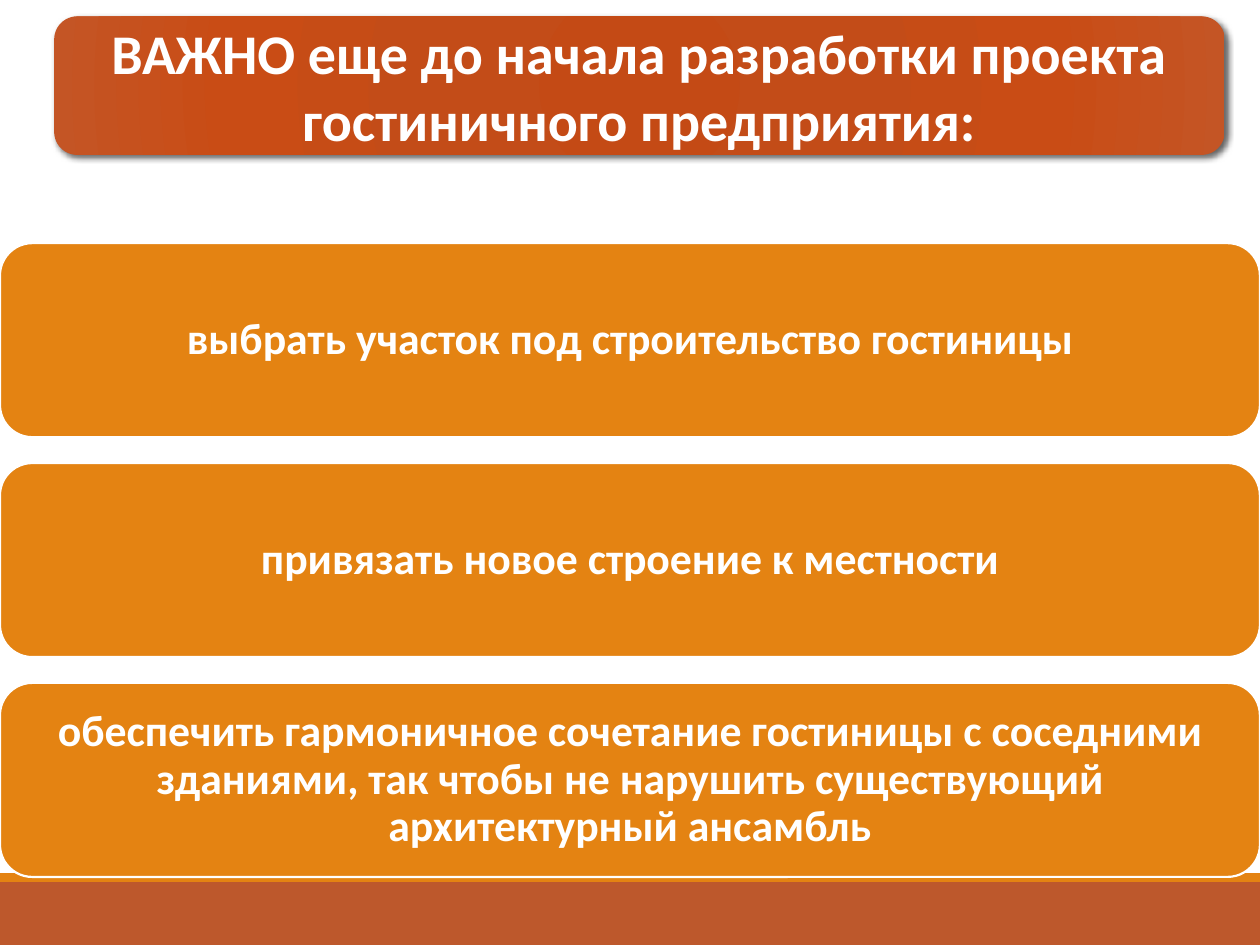
from lxml import etree
from pptx import Presentation
from pptx.dml.color import RGBColor
from pptx.enum.shapes import MSO_SHAPE
from pptx.enum.text import MSO_ANCHOR, MSO_AUTO_SIZE, PP_ALIGN
from pptx.oxml import parse_xml
from pptx.oxml.ns import nsdecls, qn
from pptx.util import Inches, Pt

COLORS = {"orange": "E48312", "rust": "BD582C", "white": "FFFFFF", "shadow": "000000"}
BANNER_STOPS = [(0, "C44A15"), (34, "C34C18"), (70, "C94C15"), (100, "C45525")]
BANNER_BOX = (0.43, 0.13, 9.29, 1.1)
TITLE = "ВАЖНО еще до начала разработки проекта гостиничного предприятия:"
STEPS = [
    "выбрать участок под строительство гостиницы",
    "привязать новое строение к местности",
    "обеспечить гармоничное сочетание гостиницы с соседними зданиями, "
    "так чтобы не нарушить существующий архитектурный ансамбль",
]
STEP_TOP, STEP_HEIGHT, STEP_PITCH = 1.93, 1.54, 1.745


def rgb(name):
    return RGBColor.from_string(COLORS[name])


def write(sp, text, size, font="Calibri", color="white", spacing=1.0, inset=0.1, inset_y=0.1):
    """Put one bold, centred paragraph in the middle of a shape."""
    tf = sp.text_frame
    tf.word_wrap = True
    tf.auto_size = MSO_AUTO_SIZE.NONE
    tf.vertical_anchor = MSO_ANCHOR.MIDDLE
    tf.margin_left = tf.margin_right = Inches(inset)
    tf.margin_top = tf.margin_bottom = Inches(inset_y)
    p = tf.paragraphs[0]
    p.alignment = PP_ALIGN.CENTER
    p.line_spacing = spacing
    p.space_before = Pt(0)
    r = p.add_run()
    r.text = text
    r.font.name, r.font.size, r.font.bold = font, Pt(size), True
    r.font.color.rgb = rgb(color)


class SlideBuilder:
    def __init__(self, prs):
        self.s = prs.slides.add_slide(prs.slide_layouts[5])

    def block(self, box, fill, shape=MSO_SHAPE.RECTANGLE, line=None):
        sp = self.s.shapes.add_shape(shape, *map(Inches, box))
        sp.shadow.inherit = False
        sp.fill.solid()
        sp.fill.fore_color.rgb = rgb(fill)
        if line:
            sp.line.color.rgb = rgb(line)
            sp.line.width = Pt(1.25)
        else:
            sp.line.fill.background()
        return sp

    def banner(self, box):
        """Rounded plate with a radial gradient and a soft shadow."""
        sp = self.block(box, "rust", MSO_SHAPE.ROUNDED_RECTANGLE)
        stops = "".join(
            f'<a:gs pos="{pos * 1000}"><a:srgbClr val="{color}"/></a:gs>'
            for pos, color in BANNER_STOPS
        )
        gradient = parse_xml(
            f'<a:gradFill {nsdecls("a")} rotWithShape="1"><a:gsLst>{stops}</a:gsLst>'
            '<a:path path="circle"><a:fillToRect l="100000" t="100000" r="100000" b="100000"/>'
            "</a:path></a:gradFill>"
        )
        props = sp.fill._xPr
        props.replace(props.find(qn("a:solidFill")), gradient)
        shadow = etree.SubElement(
            props.find(qn("a:effectLst")), qn("a:outerShdw"),
            blurRad=str(Pt(3.5)), dist=str(Pt(2)), dir=str(45 * 60000), rotWithShape="0",
        )
        color = etree.SubElement(shadow, qn("a:srgbClr"), val=COLORS["shadow"])
        etree.SubElement(color, qn("a:alpha"), val="60000")

    def title(self, text, box):
        sp = self.s.shapes.title
        sp.left, sp.top, sp.width, sp.height = map(Inches, box)
        write(sp, text, 32, inset_y=0.05)
        # Bring the title in front of the banner
        tree = sp.element.getparent()
        tree.append(sp.element)

    def step(self, text, box):
        sp = self.block(box, "orange", MSO_SHAPE.ROUNDED_RECTANGLE, line="white")
        write(sp, text, 25, spacing=0.9)


def main():
    prs = Presentation()
    prs.slide_width, prs.slide_height = Inches(10), Inches(7.5)
    slide = SlideBuilder(prs)
    slide.block((0, 7, 10, 0.5), "rust")
    slide.block((0, 6.93, 10, 0.07), "orange")
    slide.banner(BANNER_BOX)
    slide.title(TITLE, BANNER_BOX)
    for i, text in enumerate(STEPS):
        slide.step(text, (0, STEP_TOP + i * STEP_PITCH, 10, STEP_HEIGHT))
    prs.save("out.pptx")


if __name__ == "__main__":
    main()
